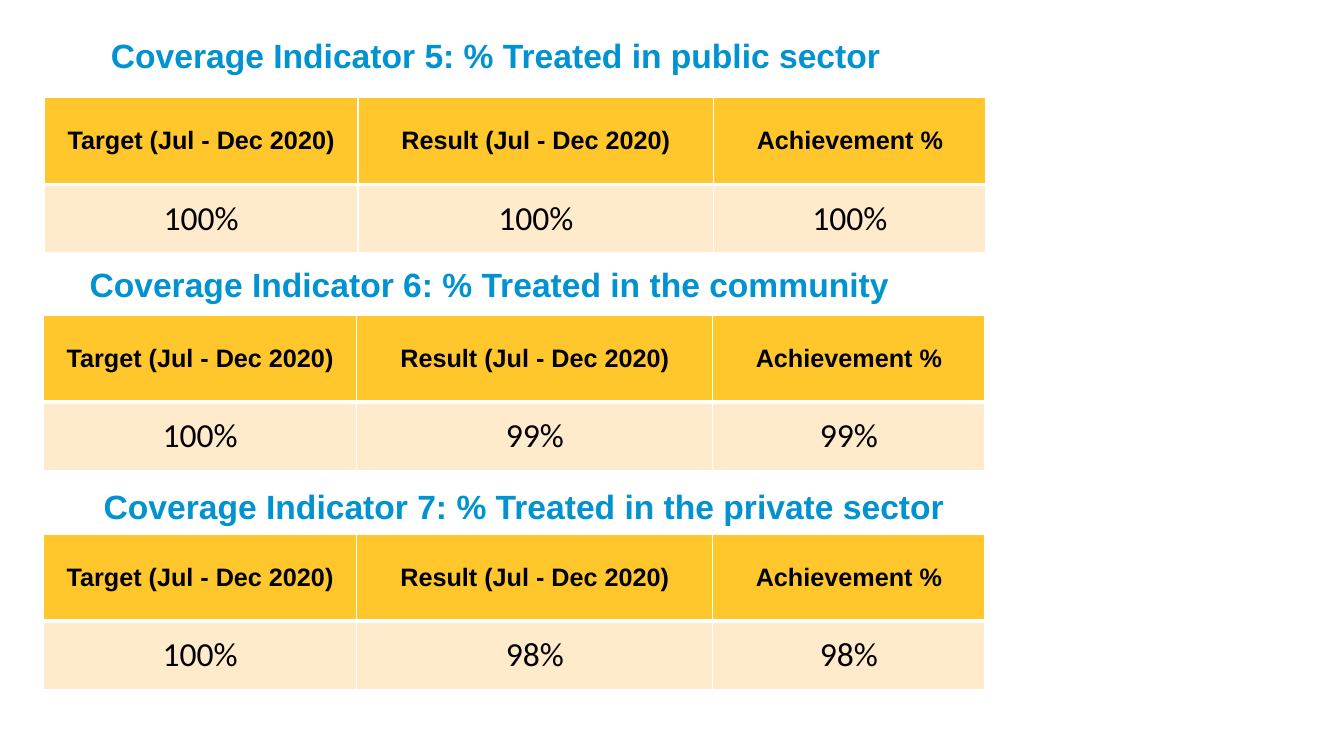
from lxml.etree import SubElement
from pptx import Presentation
from pptx.dml.color import RGBColor
from pptx.enum.text import MSO_ANCHOR as Anchor, MSO_AUTO_SIZE as AutoSize, PP_ALIGN as Align
from pptx.oxml.ns import qn
from pptx.util import Inches, Pt

HEADERS = ["Target (Jul - Dec 2020)", "Result (Jul - Dec 2020)", "Achievement %"]
INDICATORS = [
    {"heading": "Coverage Indicator 5: % Treated in public sector",
     "heading_box": (1.1, 0.11, 11.23, 0.87),
     "table_at": (0.44, 0.97), "values": ["100%", "100%", "100%"]},
    {"heading": "Coverage Indicator 6: % Treated in the community",
     "heading_box": (0.79, 2.57, 9.13, 0.5),
     "table_at": (0.43, 3.13), "values": ["100%", "99%", "99%"]},
    {"heading": "Coverage Indicator 7: % Treated in the private sector",
     "heading_box": (0.93, 4.77, 8.99, 0.5),
     "table_at": (0.43, 5.3), "values": ["100%", "98%", "98%"]},
]
COLORS = {"heading": "0092D1", "header": "FFC72C", "body": "FFEBCB",
          "text": "000000", "border": "FFFFFF"}
COL_WIDTHS = [3.11, 3.53, 2.7]
ROW_HEIGHTS = [0.86, 0.68]
ROW_STYLES = [
    {"fill": "header", "font": "Arial", "size": 18, "bold": True,
     "borders": {"L": 1, "R": 1, "T": 1, "B": 3}},
    {"fill": "body", "font": "Calibri", "size": 24, "bold": False,
     "borders": {"L": 1, "R": 1, "T": 3, "B": 1}},
]


def add_run(p, text, font, size, bold, color):
    r = p.add_run()
    r.text = text
    r.font.name = font
    r.font.size = Pt(size)
    r.font.bold = bold
    r.font.color.rgb = RGBColor.from_string(COLORS[color])


def fill_heading(sp, text):
    tf = sp.text_frame
    tf.word_wrap = True
    p = tf.paragraphs[0]
    p.alignment = Align.LEFT
    add_run(p, text, "Arial", 24, True, "heading")
    return tf


def set_borders(cell, widths):
    tc_pr = cell._tc.get_or_add_tcPr()
    for side, width in widths.items():
        ln = SubElement(tc_pr, qn(f"a:ln{side}"), w=str(Pt(width)))
        fill = SubElement(ln, qn("a:solidFill"))
        SubElement(fill, qn("a:srgbClr"), val=COLORS["border"])


def style_cell(cell, text, style, tight):
    set_borders(cell, style["borders"])
    cell.fill.solid()
    cell.fill.fore_color.rgb = RGBColor.from_string(COLORS[style["fill"]])
    cell.vertical_anchor = Anchor.MIDDLE
    cell.margin_left = cell.margin_right = Inches(0 if tight else 0.1)
    cell.margin_top = cell.margin_bottom = Inches(0 if tight else 0.05)
    p = cell.text_frame.paragraphs[0]
    p.alignment = Align.CENTER
    add_run(p, text, style["font"], style["size"], style["bold"], "text")


def add_result_table(slide, at, values):
    size = (sum(COL_WIDTHS), sum(ROW_HEIGHTS))
    table = slide.shapes.add_table(
        len(ROW_HEIGHTS), len(COL_WIDTHS), *map(Inches, at + size)).table
    for column, width in zip(table.columns, COL_WIDTHS):
        column.width = Inches(width)
    for i, texts in enumerate([HEADERS, values]):
        table.rows[i].height = Inches(ROW_HEIGHTS[i])
        for j, text in enumerate(texts):
            tight = i == 1 and j < len(texts) - 1
            style_cell(table.cell(i, j), text, ROW_STYLES[i], tight)


def main():
    prs = Presentation()
    prs.slide_width, prs.slide_height = Inches(13.33), Inches(7.5)
    slide = prs.slides.add_slide(prs.slide_layouts[5])
    for n, indicator in enumerate(INDICATORS):
        box = [Inches(v) for v in indicator["heading_box"]]
        if n == 0:
            title = slide.shapes.title
            title.left, title.top, title.width, title.height = box
            tf = fill_heading(title, indicator["heading"])
            tf.auto_size = AutoSize.NONE
            tf.vertical_anchor = Anchor.MIDDLE
            tf.margin_left = tf.margin_right = tf.margin_top = tf.margin_bottom = 0
        else:
            tf = fill_heading(slide.shapes.add_textbox(*box), indicator["heading"])
            tf.auto_size = AutoSize.SHAPE_TO_FIT_TEXT
        add_result_table(slide, indicator["table_at"], indicator["values"])
    prs.save("out.pptx")


if __name__ == "__main__":
    main()
